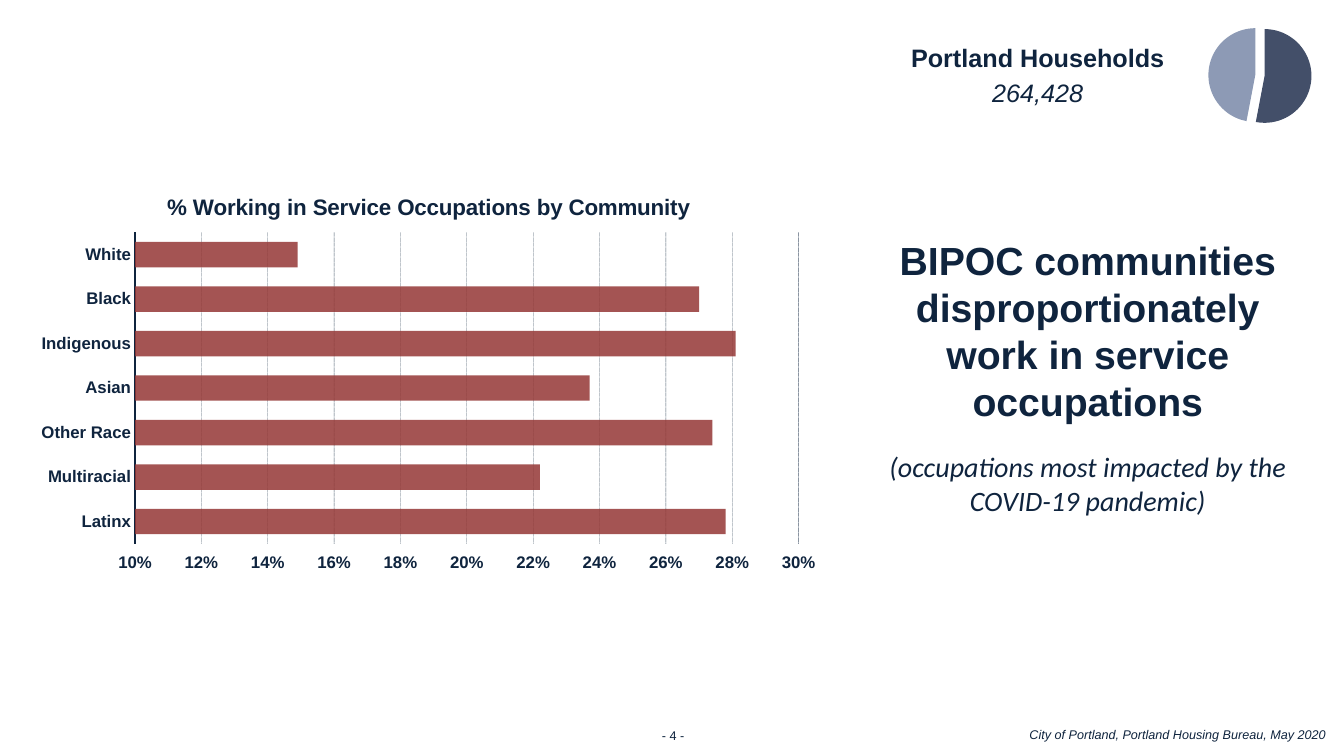
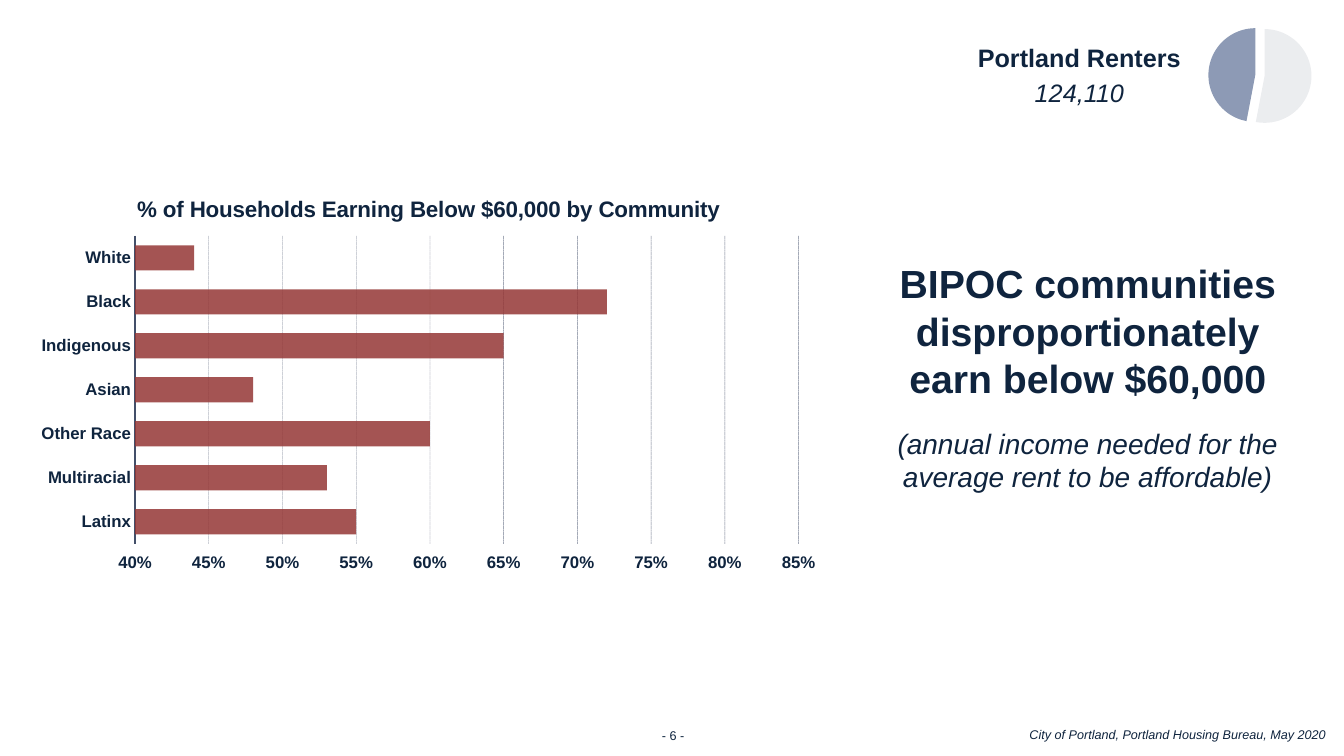
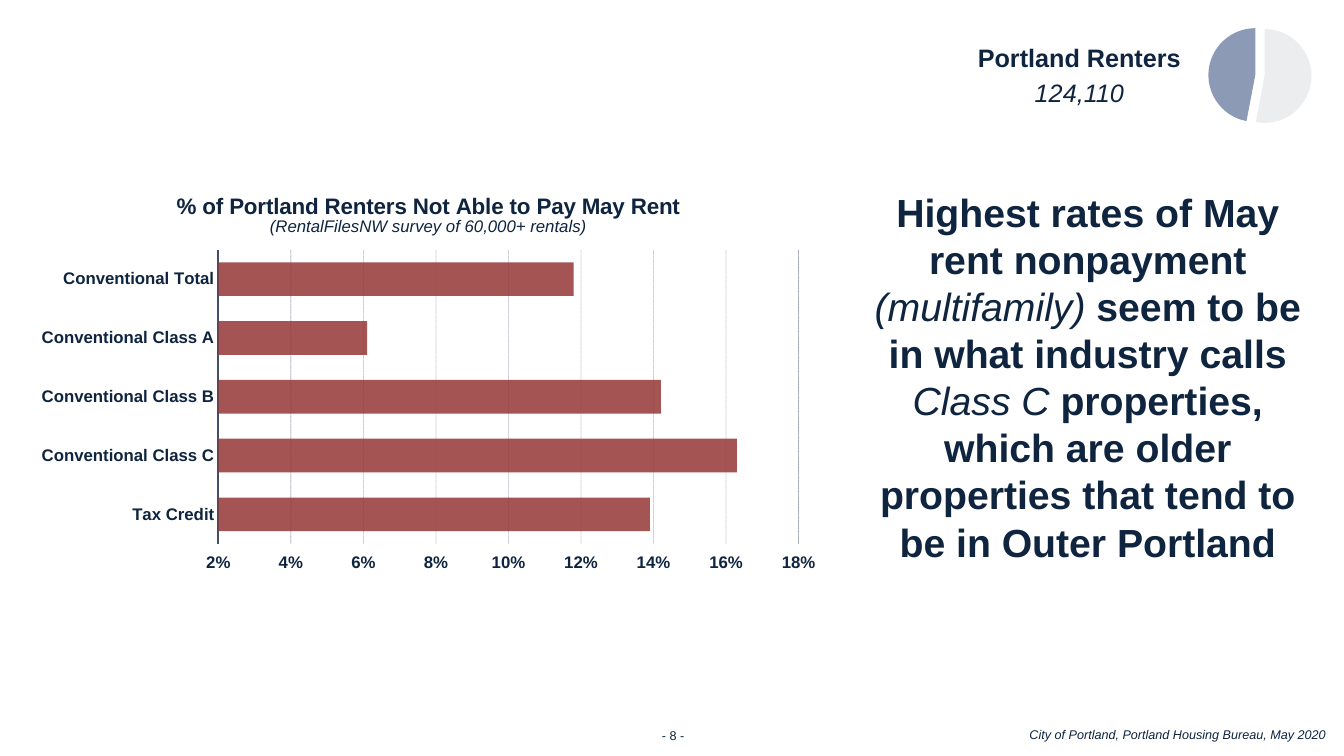
import pptx
import pptx.util
import pptx.chart.data
import pptx.dml.color
import pptx.enum.chart
import pptx.enum.dml
import pptx.enum.text
import pptx.oxml
import pptx.oxml.ns

Pt = pptx.util.Pt
RGB = pptx.dml.color.RGBColor
qn = pptx.oxml.ns.qn
Align = pptx.enum.text.PP_ALIGN
Anchor = pptx.enum.text.MSO_ANCHOR
Kind = pptx.enum.chart.XL_CHART_TYPE
Tick = pptx.enum.chart.XL_TICK_MARK

# Shared look
NAVY = RGB(0x0F, 0x24, 0x3E)
SLATE = RGB(0x43, 0x4F, 0x69)
MIST = RGB(0x8D, 0x9A, 0xB5)
BRICK = RGB(0x95, 0x37, 0x35)
BLACK = RGB(0, 0, 0)
FONT = "Arial"
SOURCE = "City of Portland, Portland Housing Bureau, May 2020"

# Places in points: left, top, width, height
BARS = (18, 126, 576, 288)
CLAIM = (624, 125, 306, 288)
PIE = (846, 7.2, 108, 93.6)
FOOT = (720, 516, 234, 18)
PAGE = (462, 520, 37.5, 11)
RIGHT, BASE = 552.5, 262.5  # plot edges inside the bar chart
RING = 67  # side of the square that holds the pie

# Content: a run is (text, style), a line is (runs, size, font)
GROUPS = ["White", "Black", "Indigenous", "Asian", "Other Race",
          "Multiracial", "Latinx"]
RENTERS = dict(name="Portland Renters", count="124,110", wide=150, fade=10)
SLIDES = [
    dict(page=4, name="Portland Households", count="264,428", wide=209.5,
         fade=100,
         claim=[([("BIPOC communities disproportionately work in service "
                   "occupations", "b")], 28, FONT),
                ([("(occupations most impacted by the COVID-19 pandemic)",
                   "i")], 20, "Calibri")],
         head=["% Working in Service Occupations by Community"],
         spot=(98.5, 8.5), plot=(78.5, 40), line=NAVY,
         scale=(0.1, 0.3, 0.02), cats=GROUPS,
         vals=[0.149, 0.27, 0.281, 0.237, 0.274, 0.222, 0.278]),
    dict(RENTERS, page=6,
         claim=[([("BIPOC communities disproportionately earn below $60,000",
                   "b")], 28, FONT),
                ([("(annual income needed for the average rent to be "
                   "affordable)", "i")], 20, FONT)],
         head=["% of Households Earning Below $60,000 by Community"],
         spot=(77, 10), plot=(78.5, 42.5), line=SLATE,
         scale=(0.4, 0.85, 0.05), cats=GROUPS,
         vals=[0.44, 0.72, 0.65, 0.48, 0.6, 0.53, 0.55]),
    dict(RENTERS, page=8,
         claim=[([("Highest rates of May rent nonpayment ", "b"),
                  ("(multifamily)", "i"),
                  (" seem to be in what industry calls ", "b"),
                  ("Class C", "i"),
                  (" properties, which are older properties that tend to "
                   "be in Outer Portland", "b")], 28, FONT)],
         head=["% of Portland Renters Not Able to Pay May Rent",
               "(RentalFilesNW survey of 60,000+ rentals)"],
         spot=(106, 9), plot=(138, 52.5), line=SLATE,
         scale=(0.02, 0.18, 0.02),
         cats=["Conventional Total", "Conventional Class A",
               "Conventional Class B", "Conventional Class C", "Tax Credit"],
         vals=[0.118, 0.061, 0.142, 0.163, 0.139]),
]


def style(font, size, mode="", face=FONT, color=NAVY):
    font.size, font.name = Pt(size), face
    font.bold, font.italic = mode == "b", mode == "i"
    font.color.rgb = color


def write(frame, lines, align=Align.CENTER):
    """Fill a text frame with lines of styled runs."""
    frame.word_wrap = True
    for n, (runs, size, face) in enumerate(lines):
        para = frame.add_paragraph() if n else frame.paragraphs[0]
        para.alignment = align
        for text, mode in runs:
            run = para.add_run()
            run.text = text
            style(run.font, size, mode, face)


def bare(frame):
    frame.margin_left = frame.margin_right = 0
    frame.margin_top = frame.margin_bottom = 0


def textbox(slide, box):
    return slide.shapes.add_textbox(*map(Pt, box)).text_frame


# Chart XML that has no public method
def fade(node, part):
    for tint in node.iter(qn("a:srgbClr")):
        tint.append(pptx.oxml.parse_xml(
            f'<a:alpha {pptx.oxml.ns.nsdecls("a")} val="{part * 1000}"/>'))


def layout(box, size, inner=False):
    """Manual layout; box and size are in points."""
    full = size * 2
    rows = "".join(f'<c:{key}Mode val="edge"/>' for key in "xy")
    rows += "".join(f'<c:{key} val="{at / span:.4f}"/>'
                    for key, at, span in zip("xywh", box, full))
    goal = '<c:layoutTarget val="inner"/>' if inner else ""
    return pptx.oxml.parse_xml(
        f'<c:layout {pptx.oxml.ns.nsdecls("c")}><c:manualLayout>{goal}{rows}'
        '</c:manualLayout></c:layout>')


def place(node, spot, new):
    for old in node.findall(qn("c:layout")):
        node.remove(old)
    node.insert(spot, new)


def chart(slide, kind, box, cats, vals, size, color):
    data = pptx.chart.data.CategoryChartData(number_format="0%")
    data.categories = cats
    data.add_series("Series 1", vals)
    made = slide.shapes.add_chart(kind, *map(Pt, box), data).chart
    made.has_legend = made.has_title = False
    style(made.font, size, "b", color=color)
    return made, made.plots[0]


def add_pie(slide, part):
    made, plot = chart(slide, Kind.PIE, PIE, ["1", "2"], [53, 47], 14, BLACK)
    plot.vary_by_categories = False
    row = plot.series[0]
    for n, color in enumerate((SLATE, MIST)):
        look = row.points[n].format
        look.fill.solid()
        look.fill.fore_color.rgb = color
        look.line.fill.background()
    slices = row._element.findall(qn("c:dPt"))
    for node in slices:
        node.find(qn("c:spPr")).addprevious(pptx.oxml.parse_xml(
            f'<c:explosion {pptx.oxml.ns.nsdecls("c")} val="10"/>'))
    if part < 100:
        fade(slices[0], part)
    size = PIE[2:]
    edge = [(span - RING) / 2 for span in size]
    place(made._chartSpace.chart.plotArea, 0,
          layout((*edge, RING, RING), size, True))


def add_bars(slide, item):
    made, plot = chart(slide, Kind.BAR_CLUSTERED, BARS, item["cats"],
                       item["vals"], 10, NAVY)
    plot.gap_width = 75
    plot.vary_by_categories = False
    row = plot.series[0]
    row.format.fill.solid()
    row.format.fill.fore_color.rgb = BRICK
    row.invert_if_negative = False
    fade(row._element, 85)

    # Axes: the first category is on top, the scale stays below
    side, foot = made.category_axis, made.value_axis
    for axis in (side, foot):
        axis.major_tick_mark = axis.minor_tick_mark = Tick.NONE
        style(axis.tick_labels.font, 12, "b")
    side.reverse_order = True
    side.format.line.color.rgb = item["line"]
    side.format.line.width = Pt(1.5)
    foot.tick_label_position = pptx.enum.chart.XL_TICK_LABEL_POSITION.HIGH
    foot.minimum_scale, foot.maximum_scale, foot.major_unit = item["scale"]
    foot.tick_labels.number_format = "0%"
    foot.tick_labels.number_format_is_linked = False
    foot.format.line.fill.background()
    foot.has_major_gridlines = True
    grid = foot.major_gridlines.format.line
    grid.color.rgb = item["line"]
    grid.width = Pt(0.25)
    grid.dash_style = pptx.enum.dml.MSO_LINE.SQUARE_DOT
    fade(foot._element.find(qn("c:majorGridlines")), 75)

    # Heading and plot area
    made.has_title = True
    looks = [(16, "b"), (12, "i")]
    write(made.chart_title.text_frame,
          [([(text, mode)], size, FONT)
           for text, (size, mode) in zip(item["head"], looks)])
    size = BARS[2:]
    place(made.chart_title._element, 1, layout(item["spot"], size))
    left, top = item["plot"]
    place(made._chartSpace.chart.plotArea, 0,
          layout((left, top, RIGHT - left, BASE - top), size, True))


def add_claim(slide, lines):
    title = slide.shapes.title
    title.left, title.top, title.width, title.height = map(Pt, CLAIM)
    frame = title.text_frame
    bare(frame)
    frame.auto_size = pptx.enum.text.MSO_AUTO_SIZE.NONE
    frame.vertical_anchor = Anchor.MIDDLE
    write(frame, lines)
    for para in frame.paragraphs[1:]:
        para.space_before = Pt(18)


def add_frame(slide, item):
    """Corner label with its pie, source line and page number."""
    add_pie(slide, item["fade"])
    wide = item["wide"]
    label = textbox(slide, (PIE[0] - wide, 30, wide, 47))
    bare(label)
    write(label, [([(item["name"], "b")], 18, FONT),
                  ([(item["count"], "i")], 18, FONT)])
    label.paragraphs[0].space_after = Pt(3.5)
    write(textbox(slide, FOOT), [([(SOURCE, "i")], 9, FONT)], Align.RIGHT)
    page = textbox(slide, PAGE)
    bare(page)
    write(page, [([(f"- {item['page']} -", "")], 9, FONT)])


def main():
    deck = pptx.Presentation()
    deck.slide_width, deck.slide_height = Pt(960), Pt(540)
    for item in SLIDES:
        slide = deck.slides.add_slide(deck.slide_layouts[5])
        add_frame(slide, item)
        add_claim(slide, item["claim"])
        add_bars(slide, item)
    deck.save("out.pptx")


if __name__ == "__main__":
    main()
